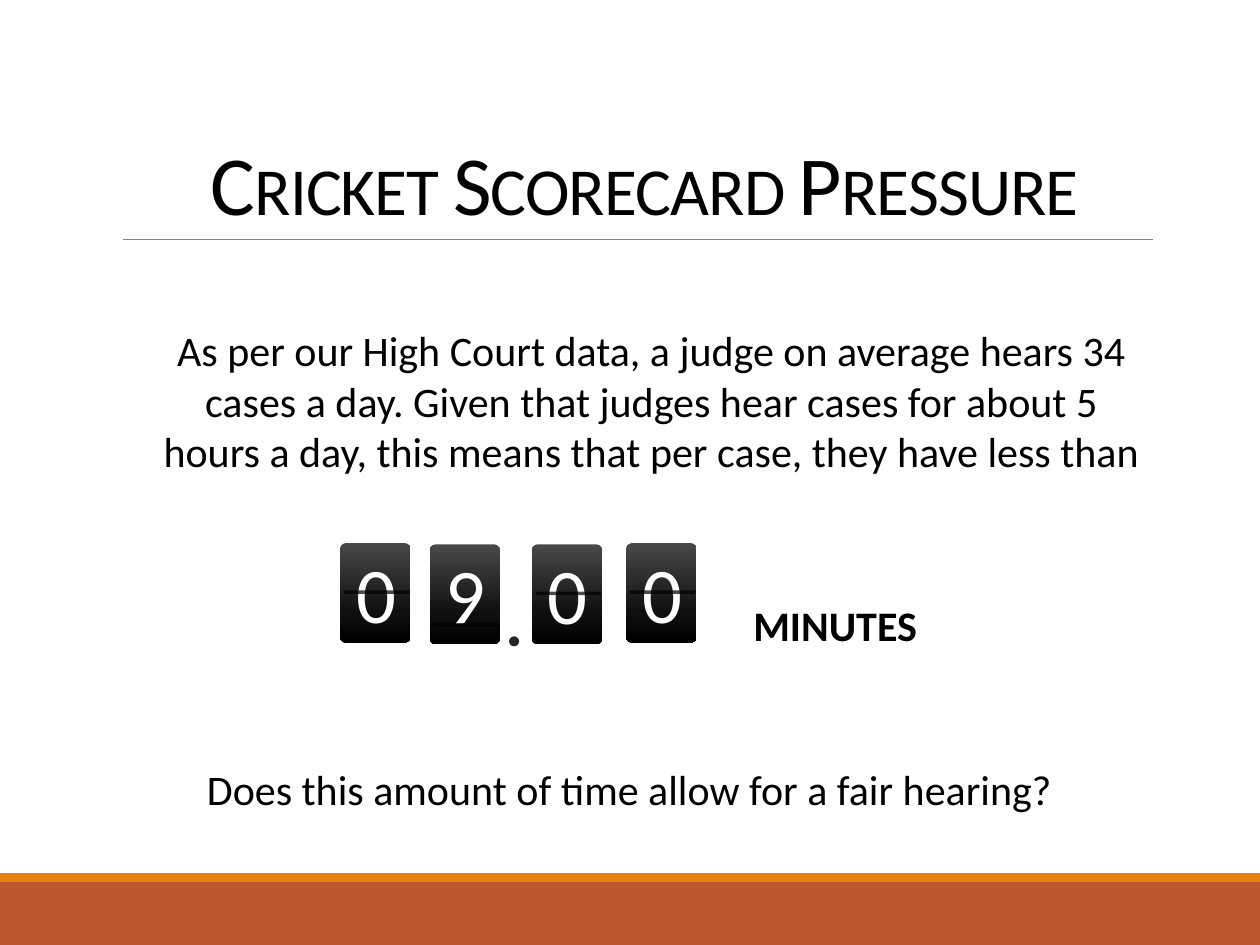
import copy
from dataclasses import dataclass

import lxml.etree
import pptx
import pptx.dml.color
import pptx.enum.shapes
import pptx.enum.text
import pptx.oxml.ns
import pptx.util

Inches = pptx.util.Inches
Pt = pptx.util.Pt
Shape = pptx.enum.shapes.MSO_SHAPE
Align = pptx.enum.text.PP_ALIGN
Anchor = pptx.enum.text.MSO_ANCHOR
Fit = pptx.enum.text.MSO_AUTO_SIZE
qn = pptx.oxml.ns.qn


def color(code):
    return pptx.dml.color.RGBColor.from_string(code)


@dataclass
class Theme:
    font: str = "Calibri"
    ink: str = "000000"
    white: str = "FFFFFF"
    rule: str = "808080"
    dot: str = "262626"
    band: str = "BD582C"
    strip: str = "E48312"
    shade: tuple = ((0, "494949"), (0.7, "0F0F0F"), (1, "000000"))
    head: int = 48
    body: int = 24
    digit: int = 45


class Deck:
    def __init__(self, theme):
        self.theme = theme
        self.file = pptx.Presentation()
        self.file.slide_width = Inches(10)
        self.file.slide_height = Inches(7.5)
        self.slide = self.file.slides.add_slide(self.file.slide_layouts[5])
        self.shapes = self.slide.shapes

    def style(self, box, text, size, tint, align, bold=False):
        frame = box.text_frame
        frame.text = text
        para = frame.paragraphs[0]
        para.alignment = align
        font = para.runs[0].font
        font.name, font.size, font.bold = self.theme.font, Pt(size), bold
        font.color.rgb = color(tint)
        return para

    def title(self, text, left, top, width, height):
        box = self.shapes.title
        box.left, box.top = Inches(left), Inches(top)
        box.width, box.height = Inches(width), Inches(height)
        para = self.style(box, text, self.theme.head, self.theme.ink, Align.CENTER)
        para.line_spacing = 0.85
        box.text_frame.auto_size = Fit.NONE
        box.text_frame.vertical_anchor = Anchor.BOTTOM
        # Small capitals, set slightly tight
        props = para.runs[0].font._element
        props.set("cap", "small")
        props.set("spc", "-50")

    def text(self, text, left, top, width, height, size=None, tint=None,
             align=Align.CENTER, bold=False, wrap=True, anchor=Anchor.TOP, home=None):
        box = (home or self.shapes).add_textbox(
            Inches(left), Inches(top), Inches(width), Inches(height))
        self.style(box, text, size or self.theme.body, tint or self.theme.ink, align, bold)
        box.text_frame.word_wrap = wrap
        box.text_frame.vertical_anchor = anchor

    def shape(self, kind, left, top, width, height, fill=None, home=None):
        item = (home or self.shapes).add_shape(
            kind, Inches(left), Inches(top), Inches(width), Inches(height))
        item.shadow.inherit = False
        item.line.fill.background()
        if fill:
            item.fill.solid()
            item.fill.fore_color.rgb = color(fill)
        return item

    def line(self, left, top, right, tint, width, alpha=None, home=None):
        item = (home or self.shapes).add_connector(
            pptx.enum.shapes.MSO_CONNECTOR.STRAIGHT,
            Inches(left), Inches(top), Inches(right), Inches(top))
        item.line.color.rgb = color(tint)
        item.line.width = Pt(width)
        props = item._element.spPr
        if alpha:
            tone = props.find(".//" + qn("a:srgbClr"))
            lxml.etree.SubElement(tone, qn("a:alpha")).set("val", str(alpha * 1000))
        lxml.etree.SubElement(props, qn("a:effectLst"))

    def shade(self, item):
        item.fill.gradient()
        item.fill.gradient_angle = 270
        stops = item._element.spPr.find(".//" + qn("a:gsLst"))
        stops.append(copy.deepcopy(stops[-1]))
        for stop, (place, tint) in zip(item.fill.gradient_stops, self.theme.shade):
            stop.position = place
            stop.color.rgb = color(tint)

    def flip(self, digit, left, top, hinge):
        home = self.shapes.add_group_shape().shapes
        card = self.shape(Shape.ROUNDED_RECTANGLE, left, top, 0.56, 0.79, home=home)
        card.adjustments[0] = 0.085
        self.shade(card)
        self.text(digit, left + 0.01, top - 0.04, 0.55, 0.86, self.theme.digit,
                  self.theme.white, wrap=False, anchor=Anchor.MIDDLE, home=home)
        self.line(left + 0.03, top + hinge, left + 0.55, self.theme.ink, 2, 70, home)


def main():
    theme = Theme()
    deck = Deck(theme)

    # Footer bands and title rule
    deck.shape(Shape.RECTANGLE, 0, 7, 10, 0.5, theme.band)
    deck.shape(Shape.RECTANGLE, 0, 6.93, 10, 0.07, theme.strip)
    deck.line(0.98, 1.9, 9.15, theme.rule, 0.5)
    deck.title("Cricket Scorecard Pressure", 0.9, 0.31, 8.25, 1.59)

    # Lead-in
    deck.text("As per our High Court data, a judge on average hears 34 cases a day. "
              "Given that judges hear cases for about 5 hours a day, this means that "
              "per case, they have less than", 1.19, 2.53, 7.96, 1.32)

    # Flip clock: digit, left, top, hinge below the top
    for card in (("0", 2.7, 4.31, 0.39), ("9", 3.41, 4.32, 0.64),
                 ("0", 4.22, 4.32, 0.39), ("0", 4.97, 4.31, 0.39)):
        deck.flip(*card)
    deck.shape(Shape.OVAL, 4.04, 5.05, 0.08, 0.08, theme.dot)
    deck.text("MINUTES", 5.88, 4.71, 2.91, 0.5, align=Align.LEFT, bold=True)

    # Closing question
    deck.text("Does this amount of time allow for a fair hearing?",
              1.51, 6.01, 6.97, 0.5, wrap=False)

    deck.file.save("out.pptx")


if __name__ == "__main__":
    main()
